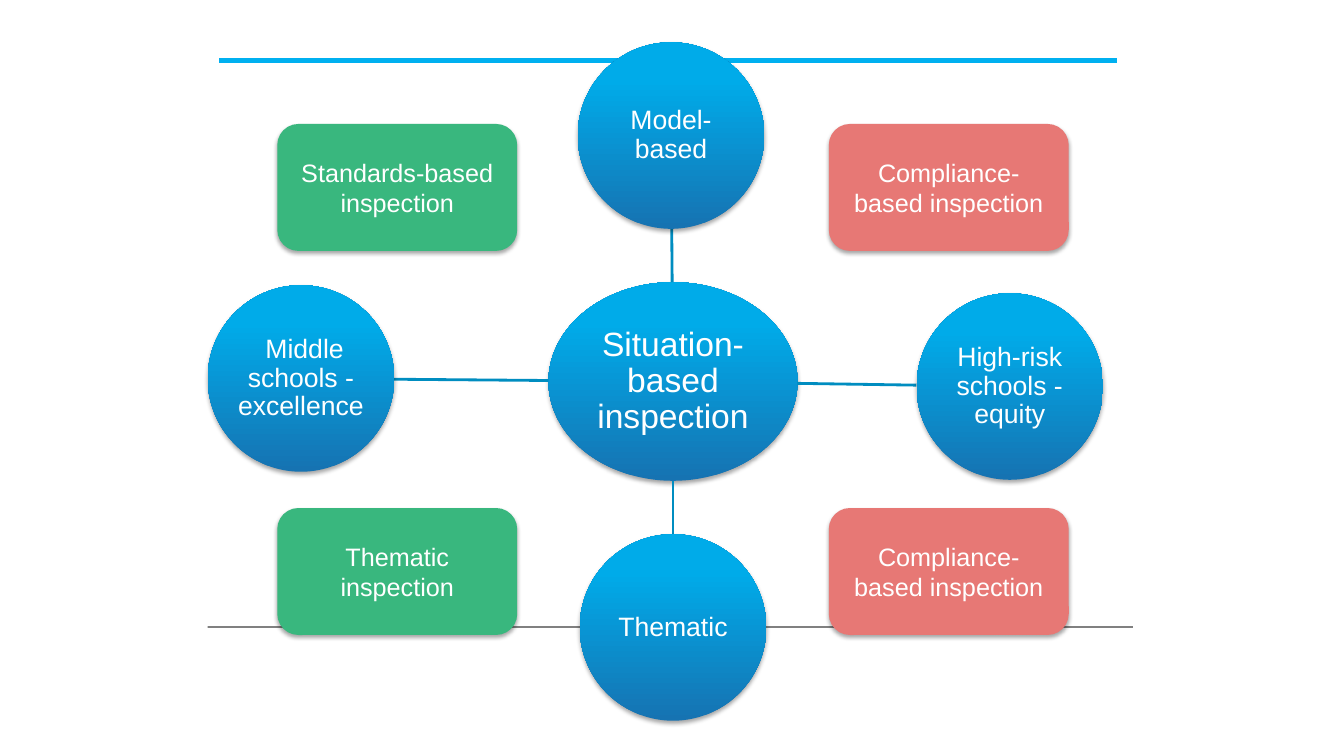
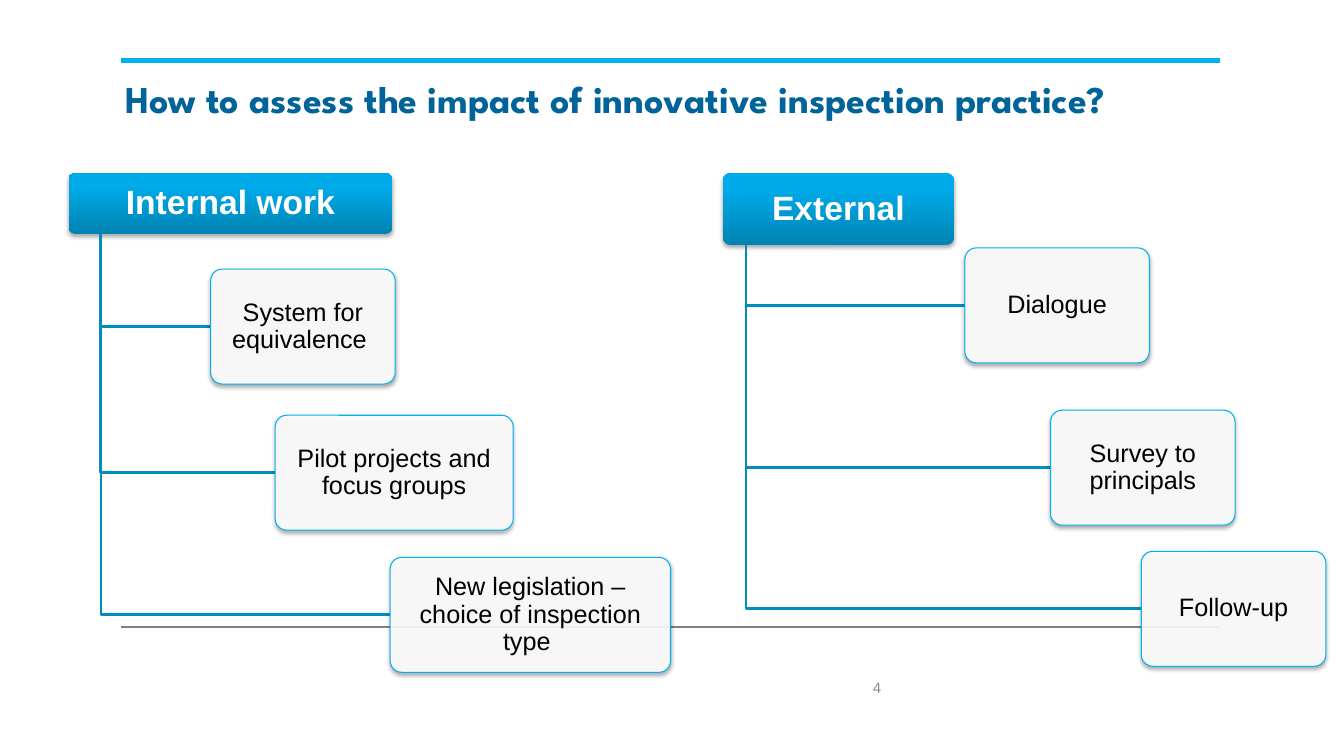
from dataclasses import dataclass
from math import hypot

from lxml import etree
from pptx import Presentation
from pptx.dml.color import RGBColor
from pptx.enum.shapes import MSO_CONNECTOR, MSO_SHAPE
from pptx.enum.text import MSO_ANCHOR, PP_ALIGN
from pptx.oxml import parse_xml
from pptx.oxml.ns import nsdecls, qn
from pptx.util import Inches, Pt

STRAIGHT = MSO_CONNECTOR.STRAIGHT
ELLIPSE, ROUNDED = MSO_SHAPE.OVAL, MSO_SHAPE.ROUNDED_RECTANGLE
LEFT, CENTER, RIGHT = PP_ALIGN.LEFT, PP_ALIGN.CENTER, PP_ALIGN.RIGHT
TOP, MIDDLE, BOTTOM = MSO_ANCHOR.TOP, MSO_ANCHOR.MIDDLE, MSO_ANCHOR.BOTTOM


@dataclass(frozen=True)
class Theme:
    font: str = "Arial"
    title_font: str = "League Spartan"
    white: str = "FFFFFF"
    black: str = "000000"
    gray: str = "808080"
    number: str = "8C8C8C"
    title: str = "006399"
    accent: str = "00B0F0"
    link: str = "008DC0"
    green: str = "39B77E"
    red: str = "E77875"
    circle_base: str = "1673B2"
    header_base: str = "0083B3"
    glow: str = "00ABE9"
    glow_end: str = "00ABEA"
    title_size: float = 27
    large: float = 24
    medium: float = 19
    body: float = 18
    small: float = 10.8
    link_width: float = 2
    tight: float = 0.9


THEME = Theme()

# Shared rules: y, colour, width in points
RULE_X = (1.2, 12.1)
RULES = [(0.6, THEME.accent, 3), (6.22, THEME.gray, 1)]
TITLE_AT = (1.2, 0.76, 10.87, 1.11)

# Inspection map: left, top, width, height
HUB = ("Situation-based inspection", (5.44, 2.8, 2.47, 1.97))
CIRCLE_SIZE = 1.85
CIRCLES = [
    ("Model-based", 5.73, 0.42),
    ("High-risk schools - equity", 9.09, 2.91),
    ("Thematic", 5.75, 5.3),
    (" Middle schools - excellence", 2.06, 2.83),
]
BOX_COLUMNS, BOX_ROWS, BOX_SIZE = (2.75, 8.22), (1.23, 5.04), (2.38, 1.26)
BOX_COLORS = (THEME.green, THEME.red)
BOX_TEXTS = [
    ("Standards-based inspection", "Compliance-based inspection"),
    ("Thematic inspection", "Compliance-based inspection"),
]
RULE_COVERS = [
    (0.74, 0.42, 1.43, 0.59),
    (11.08, 0.34, 1.43, 0.59),
    (11.24, 5.78, 1.43, 1.27),
    (0.63, 5.56, 1.43, 1.27),
]

# Impact trees: header and its place, then cards with left, top, width
IMPACT_TITLE = "How to assess the impact of innovative inspection practice?"
CARD_HEIGHT = 1.14
TREES = [
    ("Internal work", (0.68, 1.72, 3.21, 0.6), [
        ("System for equivalence ", 2.09, 2.67, 1.83),
        ("Pilot projects and focus groups", 2.73, 4.12, 2.36),
        ("New legislation – choice of inspection type ", 3.87, 5.53, 2.78),
    ]),
    ("External", (7.17, 1.72, 2.29, 0.71), [
        ("Dialogue", 9.57, 2.46, 1.83),
        ("Survey to principals", 10.42, 4.07, 1.83),
        ("Follow-up", 11.32, 5.47, 1.83),
    ]),
]
PAGE_NUMBER = ("4", (8.17, 6.56, 0.67, 0.4))


def rgb(color):
    return RGBColor.from_string(color)


def inches(values):
    return [Inches(value) for value in values]


def write(shape, text, size, color, align=CENTER, anchor=MIDDLE, font=THEME.font,
          bold=False, spacing=THEME.tight, margins=None):
    """Set text and format it; margins are (horizontal, vertical) inches."""
    frame = shape.text_frame
    frame.text = text
    frame.word_wrap = True
    frame.vertical_anchor = anchor
    if margins:
        frame.margin_left = frame.margin_right = Inches(margins[0])
        frame.margin_top = frame.margin_bottom = Inches(margins[1])
    para = frame.paragraphs[0]
    para.alignment = align
    para.line_spacing = spacing
    for span in para.runs:
        span.font.name = font
        span.font.size = Pt(size)
        span.font.bold = bold
        span.font.color.rgb = rgb(color)


def add_box(page, kind, at, fill=None, outline=None, corner=None, shadow=True):
    box = page.shapes.add_shape(kind, *inches(at))
    if corner is not None:
        box.adjustments[0] = corner
    if fill:
        box.fill.solid()
        box.fill.fore_color.rgb = rgb(fill)
    if outline:
        box.line.color.rgb = rgb(outline)
        box.line.width = Pt(0.75)
    else:
        box.line.fill.background()
    box.shadow.inherit = False
    if shadow:
        effects = box.element.spPr.find(qn("a:effectLst"))
        effects.append(parse_xml(
            f'<a:outerShdw {nsdecls("a")} blurRad="{Pt(3.1)}" dist="{Pt(1.8)}" '
            'dir="5400000" rotWithShape="0"><a:srgbClr val="000000">'
            '<a:alpha val="35000"/></a:srgbClr></a:outerShdw>'))
    return box


def fill_gradient(box, base):
    """Fill from the base colour at the bottom to the bright accent at the top."""
    stops = "".join(
        f'<a:gs pos="{place * 1000}"><a:srgbClr val="{color}"/></a:gs>'
        for place, color in ((0, base), (80, THEME.glow), (100, THEME.glow_end)))
    box.fill.background()
    properties = box.element.spPr
    properties.replace(properties.find(qn("a:noFill")), parse_xml(
        f'<a:gradFill {nsdecls("a")} rotWithShape="1"><a:gsLst>{stops}</a:gsLst>'
        '<a:lin ang="16200000" scaled="0"/></a:gradFill>'))


def add_line(page, start, end, color=THEME.link, width=THEME.link_width):
    line = page.shapes.add_connector(STRAIGHT, *inches((*start, *end)))
    line.line.color.rgb = rgb(color)
    line.line.width = Pt(width)
    etree.SubElement(line.element.spPr, qn("a:effectLst"))
    return line


def add_elbow(page, start, end):
    """Draw an open outline straight down from start, then across to end."""
    corner = (start[0], end[1])
    builder = page.shapes.build_freeform(*inches(start), scale=1.0)
    builder.add_line_segments([inches(corner), inches(end)], close=False)
    elbow = builder.convert_to_shape()
    elbow.fill.background()
    elbow.line.color.rgb = rgb(THEME.link)
    elbow.line.width = Pt(THEME.link_width)
    elbow.shadow.inherit = False


def center(at):
    left, top, width, height = at
    return left + width / 2, top + height / 2


def edge_toward(at, target):
    """Point where the ellipse's outline meets the line from its centre to target."""
    x, y = center(at)
    across, down = target[0] - x, target[1] - y
    reach = 1 / hypot(across / (at[2] / 2), down / (at[3] / 2))
    return x + across * reach, y + down * reach


def set_up_master(deck, page, layout):
    """Put the shared rules on the master and place the layout's title."""
    for number, (y, color, width) in enumerate(RULES, start=101):
        rule = add_line(page, (RULE_X[0], y), (RULE_X[1], y), color, width)
        rule.element.nvCxnSpPr.cNvPr.id = number
        deck.slide_master.shapes.element.append(rule.element)
    title = layout.placeholders[0]
    title.left, title.top, title.width, title.height = inches(TITLE_AT)


def add_circle(page, text, at, size, margin):
    circle = add_box(page, ELLIPSE, at)
    fill_gradient(circle, THEME.circle_base)
    write(circle, text, size, THEME.white, margins=(margin, margin))


def build_inspection_map(page):
    hub_text, hub_at = HUB
    add_circle(page, hub_text, hub_at, THEME.large, 0.02)
    for text, left, top in CIRCLES:
        at = (left, top, CIRCLE_SIZE, CIRCLE_SIZE)
        add_line(page, edge_toward(hub_at, center(at)),
                 edge_toward(at, center(hub_at)))
        add_circle(page, text, at, THEME.medium, 0.01)
    for top, texts in zip(BOX_ROWS, BOX_TEXTS):
        for left, color, text in zip(BOX_COLUMNS, BOX_COLORS, texts):
            box = add_box(page, ROUNDED, (left, top, *BOX_SIZE), color)
            write(box, text, THEME.body, THEME.white, spacing=1.0)
    for at in RULE_COVERS:
        add_box(page, ROUNDED, at, THEME.white, shadow=False)


def add_card(page, text, at):
    card = add_box(page, ROUNDED, at, THEME.white, THEME.accent, 0.1)
    color = card.element.spPr.find(qn("a:solidFill"))[0]
    etree.SubElement(color, qn("a:alpha"), val="90000")
    write(card, text, THEME.body, THEME.black, margins=(0.04, 0.03))


def add_tree(page, text, at, cards):
    left, top, width, height = at
    header = add_box(page, ROUNDED, at, corner=0.1)
    fill_gradient(header, THEME.header_base)
    write(header, text, THEME.large, THEME.white, bold=True, margins=(0.05, 0.03))
    trunk = (left + width / 10, top + height)
    for card_text, card_left, card_top, card_width in cards:
        add_elbow(page, trunk, (card_left, card_top + CARD_HEIGHT / 2))
        add_card(page, card_text, (card_left, card_top, card_width, CARD_HEIGHT))


def build_impact_trees(page):
    write(page.shapes.title, IMPACT_TITLE, THEME.title_size, THEME.title, LEFT, TOP,
          THEME.title_font, bold=True, margins=(0.04, 0.04))
    number, number_at = PAGE_NUMBER
    number_box = page.shapes.add_textbox(*inches(number_at))
    write(number_box, number, THEME.small, THEME.number, RIGHT, BOTTOM, spacing=1.0)
    for tree in TREES:
        add_tree(page, *tree)


def main():
    deck = Presentation()
    deck.slide_width, deck.slide_height = inches((13.33, 7.5))
    title_layout, blank_layout = deck.slide_layouts[5], deck.slide_layouts[6]
    map_page = deck.slides.add_slide(blank_layout)
    set_up_master(deck, map_page, title_layout)
    build_inspection_map(map_page)
    build_impact_trees(deck.slides.add_slide(title_layout))
    deck.save("out.pptx")


if __name__ == "__main__":
    main()
